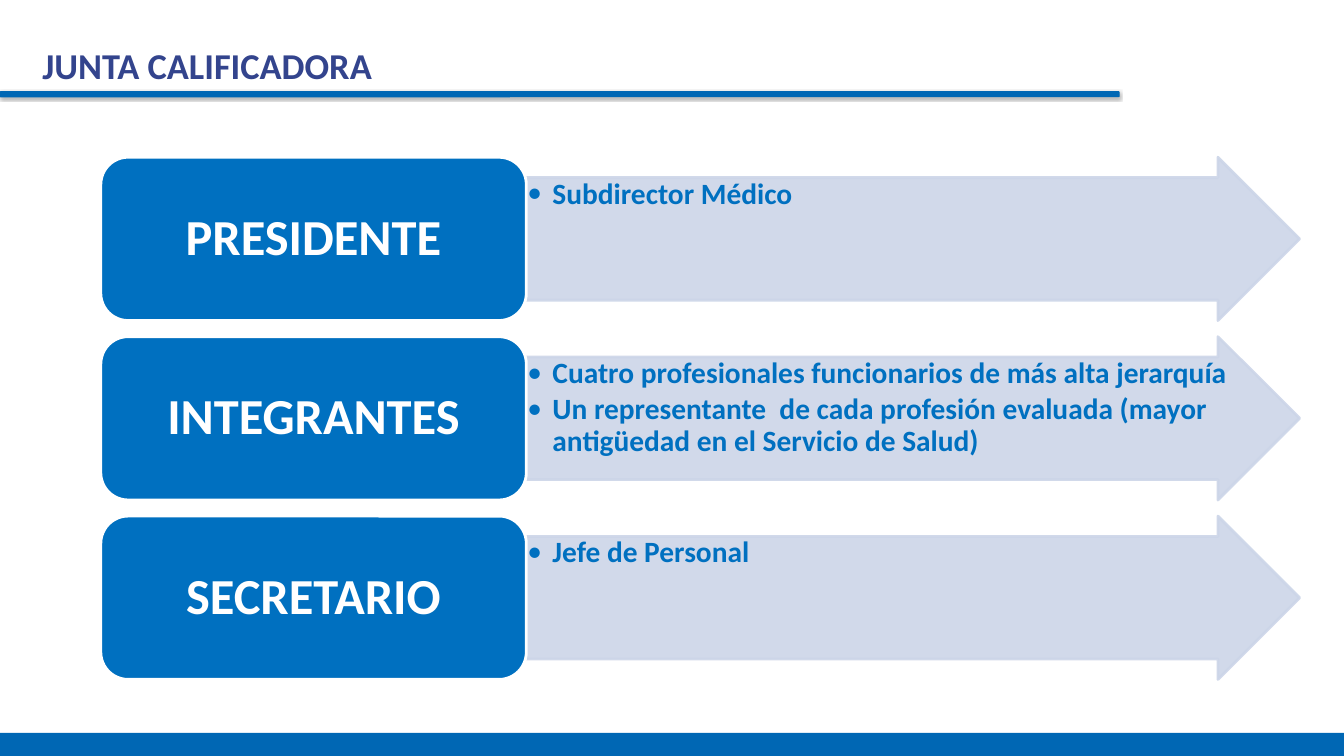
from dataclasses import dataclass

from lxml import etree
from pptx import Presentation
from pptx.dml.color import RGBColor
from pptx.enum.shapes import MSO_SHAPE
from pptx.enum.text import MSO_ANCHOR, MSO_AUTO_SIZE, PP_ALIGN
from pptx.oxml.ns import qn
from pptx.util import Pt

RECT = MSO_SHAPE.RECTANGLE
ROUNDED = MSO_SHAPE.ROUNDED_RECTANGLE
ARROW = MSO_SHAPE.RIGHT_ARROW
TOP, MIDDLE = MSO_ANCHOR.TOP, MSO_ANCHOR.MIDDLE
LEFT, CENTER = PP_ALIGN.LEFT, PP_ALIGN.CENTER
NO_AUTOFIT = MSO_AUTO_SIZE.NONE
TITLE_ONLY = 5
PX = 9144  # 100 px to the inch


@dataclass(frozen=True)
class Theme:
    font: str = "Calibri"
    bar: str = "0067B4"
    title: str = "33448D"
    role: str = "0070C0"
    arrow: str = "CCD5E8"
    white: str = "FFFFFF"
    title_size: int = 26
    role_size: int = 36
    member_size: int = 21


THEME = Theme()

ROLES = [
    ("PRESIDENTE", ["Subdirector Médico"]),
    ("INTEGRANTES", [
        "Cuatro profesionales funcionarios de más alta jerarquía",
        "Un representante  de cada profesión evaluada "
        "(mayor antigüedad en el Servicio de Salud)",
    ]),
    ("SECRETARIO", ["Jefe de Personal"]),
]


def px(length):
    return round(length * PX)


def add_panel(slide, kind, box, fill, line=None, line_width=2):
    panel = slide.shapes.add_shape(kind, *map(px, box))
    panel.shadow.inherit = False
    panel.fill.solid()
    panel.fill.fore_color.rgb = RGBColor.from_string(fill)
    if line:
        panel.line.color.rgb = RGBColor.from_string(line)
        panel.line.width = Pt(line_width)
    else:
        panel.line.fill.background()
    return panel


def format_frame(frame, anchor, margins):
    left, top, right, bottom = map(px, margins)
    settings = dict(word_wrap=True, auto_size=NO_AUTOFIT, vertical_anchor=anchor,
                    margin_left=left, margin_top=top,
                    margin_right=right, margin_bottom=bottom)
    for name, value in settings.items():
        setattr(frame, name, value)


def write_lines(frame, lines, size, color, bullet_indent=0, **spacing):
    for index, line in enumerate(lines):
        paragraph = frame.paragraphs[0] if index == 0 else frame.add_paragraph()
        paragraph.text = line
        for name, value in spacing.items():
            setattr(paragraph, name, value)
        if bullet_indent:
            properties = paragraph._p.get_or_add_pPr()
            properties.set("marL", str(px(bullet_indent)))
            properties.set("indent", str(-px(bullet_indent)))
            etree.SubElement(properties, qn("a:buFont"), typeface=THEME.font)
            etree.SubElement(properties, qn("a:buChar"), char="•")
        for name, value in dict(name=THEME.font, size=Pt(size), bold=True).items():
            setattr(paragraph.font, name, value)
        paragraph.font.color.rgb = RGBColor.from_string(color)


def set_opacity(panel, percent):
    for color in panel._element.spPr.iter(qn("a:srgbClr")):
        etree.SubElement(color, qn("a:alpha"), val=str(percent * 1000))


def add_soft_shadow(panel):
    effects = panel._element.spPr.find(qn("a:effectLst"))
    shadow = etree.SubElement(effects, qn("a:outerShdw"), blurRad=str(Pt(2)),
                              dist=str(Pt(1)), dir="5400000", rotWithShape="0")
    color = etree.SubElement(shadow, qn("a:srgbClr"), val="000000")
    etree.SubElement(color, qn("a:alpha"), val="35000")


def add_header(slide, box):
    left, top, width, height = box
    # Rule under the title
    rule = add_panel(slide, ROUNDED, (left, top + height - 5, 1110, 5),
                     THEME.bar, THEME.bar, 0.75)
    rule.adjustments[0] = 0.12
    add_soft_shadow(rule)
    # Title
    title = slide.shapes.title
    title_box = dict(left=left + 42, top=top, width=width - 66, height=42)
    for name, value in title_box.items():
        setattr(title, name, px(value))
    format_frame(title.text_frame, MIDDLE, (0, 0, 0, 0))
    write_lines(title.text_frame, ["JUNTA CALIFICADORA"], THEME.title_size,
                THEME.title, alignment=LEFT)


def add_role(slide, box, role, members):
    left, top, width, height = box
    role_width = 422
    # Arrow listing the members
    arrow = add_panel(slide, ARROW,
                      (left + role_width, top, width - role_width, height),
                      THEME.arrow, THEME.arrow)
    arrow.adjustments[0], arrow.adjustments[1] = 0.75, 0.5
    set_opacity(arrow, 90)
    format_frame(arrow.text_frame, TOP, (1, 1, 1, 1))
    write_lines(arrow.text_frame, members, THEME.member_size, THEME.role,
                bullet_indent=25, alignment=LEFT, line_spacing=0.9,
                space_after=Pt(3))
    # Role name
    label = add_panel(slide, ROUNDED, (left, top, role_width, height),
                      THEME.role, THEME.white)
    format_frame(label.text_frame, MIDDLE, (15, 7, 15, 7))
    write_lines(label.text_frame, [role], THEME.role_size, THEME.white,
                alignment=CENTER, line_spacing=0.9)


def add_board(slide, box):
    left, top, width, height = box
    gap = 16
    row_height = (height - gap * (len(ROLES) - 1)) / len(ROLES)
    for index, (role, members) in enumerate(ROLES):
        row_top = top + index * (row_height + gap)
        add_role(slide, (left, row_top, width, row_height), role, members)


def main():
    presentation = Presentation()
    presentation.slide_width, presentation.slide_height = px(1333), px(750)
    slide = presentation.slides.add_slide(presentation.slide_layouts[TITLE_ONLY])
    add_header(slide, (0, 43, 1333, 53))
    add_board(slide, (100, 156, 1189, 518))
    # Footer band
    add_panel(slide, RECT, (0, 727, 1333, 23), THEME.bar)
    presentation.save("out.pptx")


if __name__ == "__main__":
    main()
